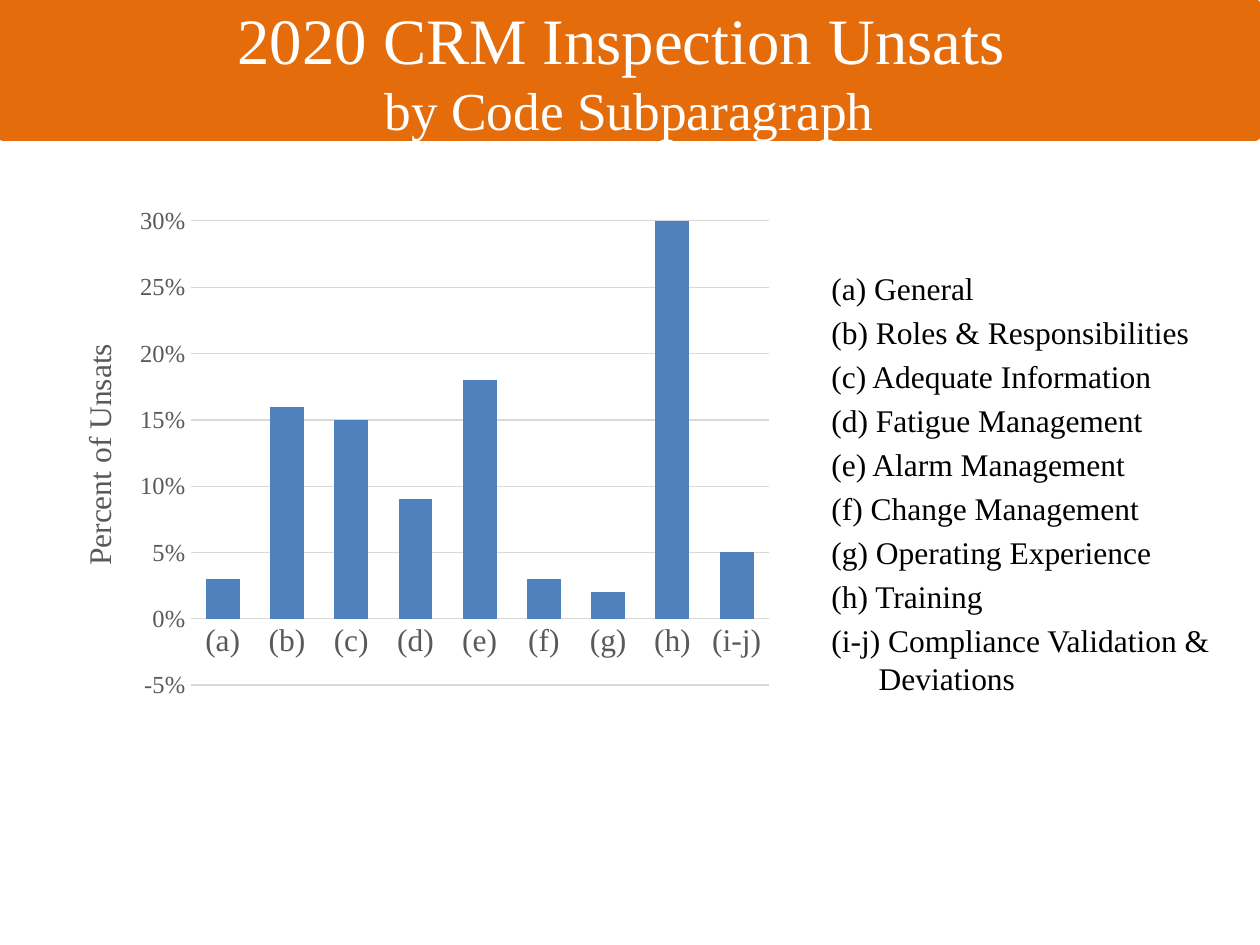
from lxml import etree
from pptx import Presentation
from pptx.chart.data import CategoryChartData
from pptx.dml.color import RGBColor
from pptx.enum.chart import XL_CHART_TYPE, XL_TICK_MARK
from pptx.enum.shapes import MSO_SHAPE
from pptx.enum.text import MSO_ANCHOR, PP_ALIGN
from pptx.oxml.ns import qn
from pptx.util import Pt

COLUMN = XL_CHART_TYPE.COLUMN_CLUSTERED
NO_TICK = XL_TICK_MARK.NONE
RECT = MSO_SHAPE.RECTANGLE
MIDDLE = MSO_ANCHOR.MIDDLE
CENTER = PP_ALIGN.CENTER

FACE = "Times New Roman"
ORANGE, BLUE, GRAY, GRID = "E46C0A", "4F81BD", "595959", "D9D9D9"

SHARES = {"(a)": 0.03, "(b)": 0.16, "(c)": 0.15, "(d)": 0.09, "(e)": 0.18,
          "(f)": 0.03, "(g)": 0.02, "(h)": 0.3, "(i-j)": 0.05}
TOPICS = ["General", "Roles & Responsibilities", "Adequate Information",
          "Fatigue Management", "Alarm Management", "Change Management",
          "Operating Experience", "Training",
          "Compliance Validation & Deviations"]


def color(code):
    return RGBColor.from_string(code)


def assign(item, values):
    for name, value in values.items():
        setattr(item, name, value)


def style(font, size, code):
    assign(font, {"name": FACE, "size": Pt(size), "bold": False})
    font.color.rgb = color(code)


def rule(line, code, width):
    line.color.rgb = color(code)
    line.width = Pt(width)


def place(part, index, **parts):
    """Fix a chart part's place, in fractions of the chart."""
    for old in part.findall(qn("c:layout")):
        part.remove(old)
    layout = etree.Element(qn("c:layout"))
    part.insert(index, layout)
    manual = etree.SubElement(layout, qn("c:manualLayout"))
    for name, value in parts.items():
        etree.SubElement(manual, qn("c:" + name)).set("val", str(value))


def add_bars(slide, x, y, w, h):
    data = CategoryChartData(number_format="0%")
    data.categories = list(SHARES)
    data.add_series("Series 1", list(SHARES.values()))
    chart = slide.shapes.add_chart(
        COLUMN, Pt(x), Pt(y), Pt(w), Pt(h), data).chart
    assign(chart, {"has_legend": False, "has_title": False})
    style(chart.font, 10, "000000")

    # Columns
    plot = chart.plots[0]
    assign(plot, {"gap_width": 90, "overlap": -27,
                  "vary_by_categories": False})
    fill = plot.series[0].format.fill
    fill.solid()
    fill.fore_color.rgb = color(BLUE)

    # Axes
    cat, val = chart.category_axis, chart.value_axis
    for axis, size in ((cat, 18), (val, 14)):
        assign(axis, {"major_tick_mark": NO_TICK, "minor_tick_mark": NO_TICK})
        style(axis.tick_labels.font, size, GRAY)
    rule(cat.format.line, GRID, 0.75)
    assign(val, {"minimum_scale": -0.05, "maximum_scale": 0.3,
                 "major_unit": 0.05, "has_major_gridlines": True})
    assign(val.tick_labels, {"number_format": "0%",
                             "number_format_is_linked": False})
    val.format.line.fill.background()
    rule(val.major_gridlines.format.line, GRID, 0.75)

    # Axis title
    title = val.axis_title
    title.text_frame.text = "Percent of Unsats"
    style(title.text_frame.paragraphs[0].runs[0].font, 18, GRAY)

    # Places of title and plot
    place(title._element, 1, xMode="edge", yMode="edge", x=0.03, y=0.22)
    place(plot._element.getparent(), 0, layoutTarget="inner",
          xMode="edge", yMode="edge", x=0.191, y=0.034, w=0.799, h=0.737)


def add_key(slide, x, y, w, h):
    frame = slide.shapes.add_textbox(Pt(x), Pt(y), Pt(w), Pt(h)).text_frame
    frame.word_wrap = True
    frame.text = "\n".join(
        f"{mark} {topic}" for mark, topic in zip(SHARES, TOPICS))
    for i, para in enumerate(frame.paragraphs):
        para.space_before = Pt(3.6 if i else 0)
        props = para._p.get_or_add_pPr()
        props.set("marL", str(Pt(27)))
        props.set("indent", str(Pt(-27)))
        style(para.runs[0].font, 18, "000000")


def add_banner(slide, x, y, w, h, lines):
    box = slide.shapes.add_shape(RECT, Pt(x), Pt(y), Pt(w), Pt(h))
    box.shadow.inherit = False
    box.fill.solid()
    box.fill.fore_color.rgb = color(ORANGE)
    rule(box.line, ORANGE, 6.75)
    frame = box.text_frame
    assign(frame, {"word_wrap": True, "vertical_anchor": MIDDLE})
    frame.text = "\n".join(text for text, size in lines)
    for para, (text, size) in zip(frame.paragraphs, lines):
        para.alignment = CENTER
        style(para.runs[0].font, size, "FFFFFF")


def main():
    deck = Presentation()
    assign(deck, {"slide_width": Pt(720), "slide_height": Pt(540)})
    slide = deck.slides.add_slide(deck.slide_layouts[6])
    # Chart, key to its labels, heading
    add_bars(slide, 30, 114, 413.5, 360)
    add_key(slide, 468, 150, 234, 288)
    add_banner(slide, 2, 3, 715, 74.2,
               [("2020 CRM Inspection Unsats ", 37),
                ("by Code Subparagraph", 30.5)])
    deck.save("out.pptx")


if __name__ == "__main__":
    main()
